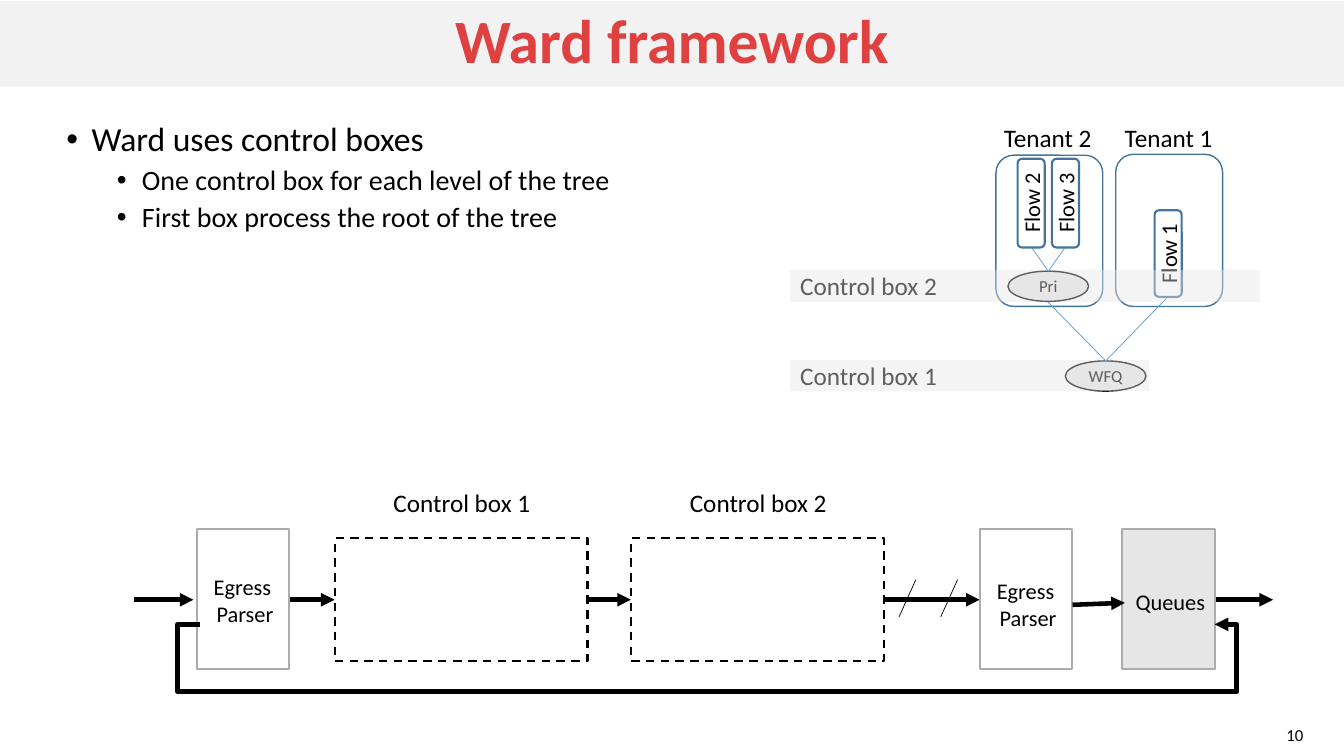
from lxml.etree import SubElement
from pptx import Presentation
from pptx.dml.color import RGBColor
from pptx.enum.dml import MSO_LINE
from pptx.enum.shapes import MSO_CONNECTOR, MSO_SHAPE
from pptx.enum.text import MSO_ANCHOR, MSO_AUTO_SIZE, PP_ALIGN
from pptx.oxml.ns import qn
from pptx.util import Pt

BLACK, GREY, FRAME, BLUE, LINK = "000000", "E7E6E6", "AFABAB", "43739E", "5B9BD5"
FLOW_Y = 428.4
BOX_TOP, BOX_WIDTH, BOX_HEIGHT = 378, 66.2, 100.1


def color(value):
    """Turn a hex string into a colour."""
    return RGBColor.from_string(value)


def points(*values):
    """Convert numbers to lengths in points."""
    return [Pt(value) for value in values]


def style_line(line, value, width, dash=None):
    """Set colour, width and dash of a line."""
    line.color.rgb = color(value)
    line.width = Pt(width)
    if dash:
        line.dash_style = dash


def add_arrowhead(shape):
    """Put a triangle at the end of a line."""
    SubElement(shape.line._get_or_add_ln(), qn("a:tailEnd"), type="triangle")


def write(paragraph, text, size, value=BLACK, bold=False):
    """Add one run to a paragraph."""
    run = paragraph.add_run()
    run.text = text
    run.font.name = "Calibri"
    run.font.size = Pt(size)
    run.font.bold = bold
    run.font.color.rgb = color(value)


def add_box(shapes, kind, area, fill=None, line=None, width=1, dash=None, alpha=None):
    """Draw a preset shape."""
    shape = shapes.add_shape(kind, *points(*area))
    shape.shadow.inherit = False
    if fill:
        shape.fill.solid()
        shape.fill.fore_color.rgb = color(fill)
    else:
        shape.fill.background()
    if alpha:
        solid = shape.fill._xPr.find(qn("a:solidFill"))
        SubElement(solid[0], qn("a:alpha"), val=str(alpha * 1000))
    if line:
        style_line(shape.line, line, width, dash)
    else:
        shape.line.fill.background()
    return shape


def center_text(shape, text, size, value=BLACK, bold=False):
    """Write one centred line inside a shape."""
    frame = shape.text_frame
    frame.vertical_anchor = MSO_ANCHOR.MIDDLE
    paragraph = frame.paragraphs[0]
    paragraph.alignment = PP_ALIGN.CENTER
    write(paragraph, text, size, value, bold)
    return paragraph


def add_text(shapes, area, lines, size, align=PP_ALIGN.LEFT, wrap=True):
    """Add a text box with one paragraph per line."""
    frame = shapes.add_textbox(*points(*area)).text_frame
    frame.word_wrap = wrap
    frame.auto_size = MSO_AUTO_SIZE.SHAPE_TO_FIT_TEXT
    for index, text in enumerate(lines):
        paragraph = frame.add_paragraph() if index else frame.paragraphs[0]
        paragraph.alignment = align
        write(paragraph, text, size)
    return frame


def add_label(shapes, left, top, width, text):
    """Add a single-line label."""
    add_text(shapes, (left, top, width, 28.8), [text], 18, wrap=False)


def add_line(shapes, start, end, value=BLACK, width=0.5, arrow=False, dash=None):
    """Draw a straight line or arrow."""
    line = shapes.add_connector(MSO_CONNECTOR.STRAIGHT, *points(*start, *end))
    SubElement(line._element.spPr, qn("a:effectLst"))
    style_line(line.line, value, width, dash)
    if arrow:
        add_arrowhead(line)


def add_bullets(shapes, area, items):
    """Add the bulleted list from (level, size, space, text) items."""
    frame = shapes.add_textbox(*points(*area)).text_frame
    frame.word_wrap = True
    for index, (level, size, space, text) in enumerate(items):
        paragraph = frame.add_paragraph() if index else frame.paragraphs[0]
        paragraph.level = level
        paragraph.line_spacing = 0.9
        paragraph.space_before = Pt(space)
        properties = paragraph._p.get_or_add_pPr()
        properties.set("marL", str(Pt(18 + 36 * level)))
        properties.set("indent", str(Pt(-18)))
        SubElement(properties, qn("a:buFont"), typeface="Arial")
        SubElement(properties, qn("a:buChar"), char="•")
        write(paragraph, text, size)


def add_stage(shapes, left, lines, text_top, fill=None):
    """Draw a pipeline stage with its caption."""
    add_box(shapes, MSO_SHAPE.RECTANGLE, (left, BOX_TOP, BOX_WIDTH, BOX_HEIGHT), fill, FRAME, 1.5)
    height = 7.2 + 19.4 * len(lines)
    add_text(shapes, (left + 2.2, text_top, 64.8, height), lines, 16, PP_ALIGN.CENTER)


def add_tree(shapes):
    """Draw the scheduling tree of the two tenants."""
    for left, top, height in ((711.4, 110.9, 108), (797, 110.2, 108.7)):
        add_box(shapes, MSO_SHAPE.ROUNDED_RECTANGLE, (left, top, 76.3, height), "FFFFFF", BLUE)
    for left, top, name in ((720, 193.7, "Pri"), (761, 257.8, "WFQ")):
        node = add_box(shapes, MSO_SHAPE.OVAL, (left, top, 57.6, 21.6), GREY, BLACK)
        center_text(node, name, 12)
    root, priority = (789.8, 257.8), (748.8, 193.7)
    for start, end in (((834.5, 211.7), root), ((748.8, 216), root),
                       ((761, 176.4), priority), ((736.6, 176.4), priority)):
        add_line(shapes, start, end, LINK)
    for number, left, top, width in ((2, 704.9, 135.4, 63.4), (3, 729.4, 135.4, 63.4),
                                     (1, 803.5, 171.4, 61.9)):
        flow = add_box(shapes, MSO_SHAPE.ROUNDED_RECTANGLE, (left, top, width, 19.4),
                       line=BLUE, width=1.5)
        flow.rotation = 270
        center_text(flow, f"Flow {number}", 16)
    for number, left in ((2, 709.9), (1, 796.3)):
        add_label(shapes, left, 84.2, 77.8, f"Tenant {number}")


def add_pipeline(shapes):
    """Draw the row of stages, its arrows and the return loop."""
    for start, end in ((95.8, 138.2), (206.6, 239), (419.8, 450.7), (631.4, 699.8), (866.9, 909.4)):
        add_line(shapes, (start, FLOW_Y), (end, FLOW_Y), width=3.25, arrow=True)
    add_stage(shapes, 140.4, ["Egress ", "Parser"], 406.1)
    add_stage(shapes, 699.8, ["Egress ", "Parser"], 409)
    add_stage(shapes, 801.4, ["Queues"], 416.9, GREY)
    add_line(shapes, (766.1, 432), (803.5, 430.6), width=3.25, arrow=True)
    for number, left in ((1, 239), (2, 450.7)):
        add_box(shapes, MSO_SHAPE.RECTANGLE, (left, 384.5, 180.7, 87.8), "FFFFFF", BLACK, 1.5,
                MSO_LINE.DASH)
        add_label(shapes, left + 35, 344.9, 113, f"Control box {number}")
    for left in (642.2, 672):
        add_line(shapes, (left + 12, 414), (left, 440.6))
    add_line(shapes, (648, FLOW_Y), (677.5, FLOW_Y), width=3, dash=MSO_LINE.ROUND_DOT)
    corners = [(126.7, 446), (126.7, 494), (883.4, 494), (883.4, 446), (867.6, 446)]
    builder = shapes.build_freeform(*points(142.6, 446))
    builder.add_line_segments([points(*corner) for corner in corners], close=False)
    loop = builder.convert_to_shape()
    loop.shadow.inherit = False
    loop.fill.background()
    style_line(loop.line, BLACK, 3.25)
    add_arrowhead(loop)


def main():
    """Build and save the slide."""
    presentation = Presentation()
    presentation.slide_width, presentation.slide_height = points(960, 540)
    shapes = presentation.slides.add_slide(presentation.slide_layouts[6]).shapes
    banner = add_box(shapes, MSO_SHAPE.RECTANGLE, (0, 0.7, 960, 61.2), "F2F2F2")
    center_text(banner, "Ward framework", 44, "DF4141", True).line_spacing = 0.9
    add_bullets(shapes, (40.3, 84.2, 888, 379.4), [
        (0, 24, 12, "Ward uses control boxes"),
        (1, 20, 5, "One control box for each level of the tree"),
        (1, 20, 5, "First box process the root of the tree"),
    ])
    number = add_text(shapes, (861.1, 514.1, 77, 21.6), ["10"], 12, PP_ALIGN.RIGHT)
    number.vertical_anchor = MSO_ANCHOR.MIDDLE
    add_pipeline(shapes)
    add_tree(shapes.add_group_shape().shapes)
    for level, top, width in ((1, 257, 256.3), (2, 193, 335.5)):
        add_label(shapes, 564.5, top - 3.2, 113, f"Control box {level}")
        add_box(shapes, MSO_SHAPE.RECTANGLE, (564.5, top, width, 22.6), GREY, alpha=41)
    presentation.save("out.pptx")


if __name__ == "__main__":
    main()
